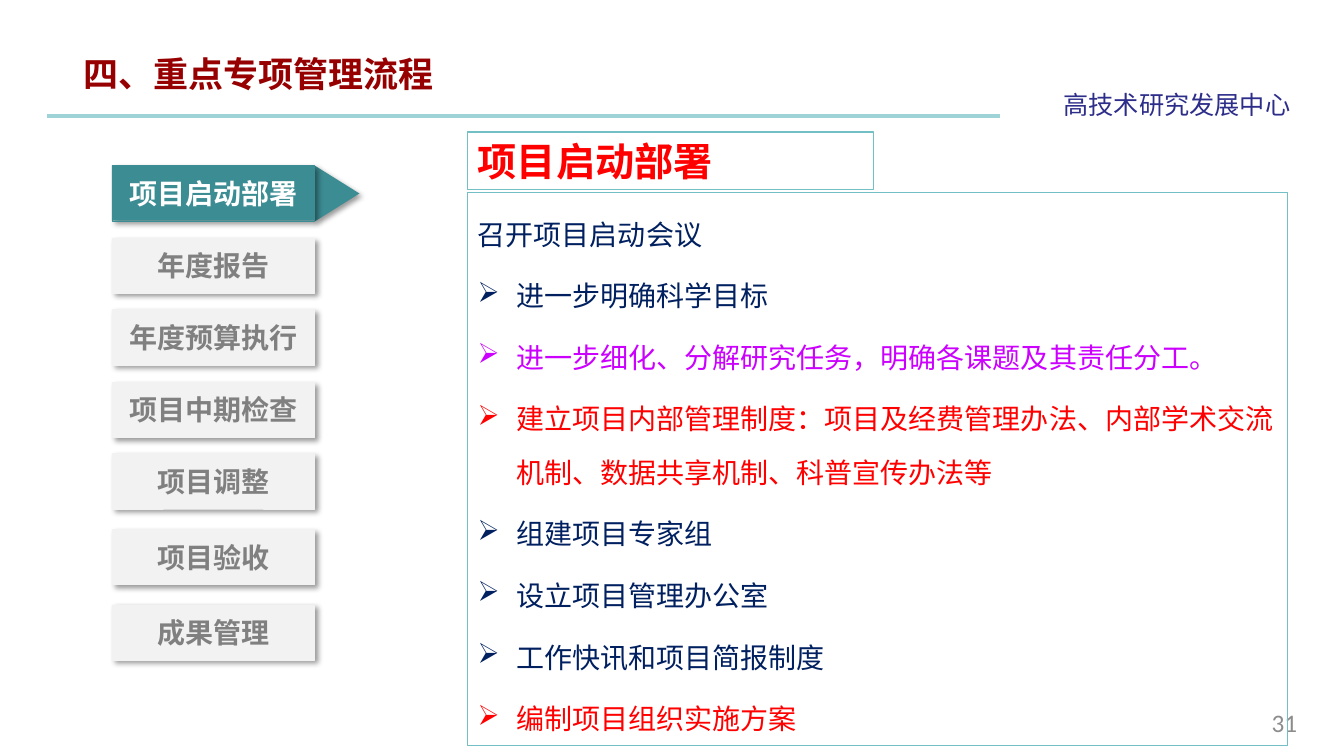
import pptx
import pptx.util
import pptx.dml.color
import pptx.enum.shapes
import pptx.enum.text
import pptx.oxml
import pptx.oxml.ns
from lxml import etree

Inches = pptx.util.Inches
Pt = pptx.util.Pt
RGBColor = pptx.dml.color.RGBColor
SHAPE = pptx.enum.shapes.MSO_SHAPE
ALIGN = pptx.enum.text.PP_ALIGN
ANCHOR = pptx.enum.text.MSO_ANCHOR
AUTO = pptx.enum.text.MSO_AUTO_SIZE
qn = pptx.oxml.ns.qn

WHITE = RGBColor(0xFF, 0xFF, 0xFF)
PALE_TEAL = RGBColor(0x9E, 0xD3, 0xD7)
FRAME_TEAL = RGBColor(0x72, 0xBF, 0xC5)
TEAL = RGBColor(0x3C, 0x8C, 0x93)
LIGHT_GRAY = RGBColor(0xF2, 0xF2, 0xF2)
GRAY = RGBColor(0x80, 0x80, 0x80)
NUMBER_GRAY = RGBColor(0x8C, 0x8C, 0x8C)
INDIGO = RGBColor(0x2D, 0x2D, 0x8A)
MAROON = RGBColor(0x96, 0x00, 0x00)
NAVY = RGBColor(0x00, 0x20, 0x60)
VIOLET = RGBColor(0xCC, 0x00, 0xFF)
RED = RGBColor(0xFF, 0x00, 0x00)

STEPS = [
    ("项目启动部署", 1.64),
    ("年度报告", 2.36),
    ("年度预算执行", 3.07),
    ("项目中期检查", 3.79),
    ("项目调整", 4.5),
    ("项目验收", 5.25),
    ("成果管理", 6),
]
TASKS = [
    ("进一步明确科学目标", NAVY),
    ("进一步细化、分解研究任务，明确各课题及其责任分工。", VIOLET),
    ("建立项目内部管理制度：项目及经费管理办法、内部学术交流机制、数据共享机制、科普宣传办法等", RED),
    ("组建项目专家组", NAVY),
    ("设立项目管理办公室", NAVY),
    ("工作快讯和项目简报制度", NAVY),
    ("编制项目组织实施方案", RED),
]


class Deck:
    font = "Noto Sans CJK SC"

    def __init__(self):
        self.prs = pptx.Presentation()
        self.prs.slide_width = Inches(13.33)
        self.prs.slide_height = Inches(7.5)
        self.s = self.prs.slides.add_slide(self.prs.slide_layouts[6])

    def line(self, x1, y1, x2, y2, color, width):
        c = self.s.shapes.add_connector(
            pptx.enum.shapes.MSO_CONNECTOR.STRAIGHT,
            Inches(x1), Inches(y1), Inches(x2), Inches(y2))
        c.line.color.rgb = color
        c.line.width = Pt(width)
        etree.SubElement(c._element.spPr, qn("a:effectLst"))

    def paragraph(self, p, text, size, color, bold=False, font=None):
        p.add_run().text = text
        p.font.size = Pt(size)
        p.font.bold = bold
        p.font.color.rgb = color
        p.font.name = font or self.font
        ea = etree.SubElement(p._p.pPr.find(qn("a:defRPr")), qn("a:ea"))
        ea.set("typeface", self.font)

    def text(self, x, y, w, h, text, size, color, wrap=True, **style):
        sp = self.s.shapes.add_textbox(Inches(x), Inches(y), Inches(w), Inches(h))
        sp.text_frame.word_wrap = wrap
        p = sp.text_frame.paragraphs[0]
        self.paragraph(p, text, size, color, **style)
        return sp

    def frame(self, x, y, w, h):
        sp = self.s.shapes.add_shape(
            SHAPE.RECTANGLE, Inches(x), Inches(y), Inches(w), Inches(h))
        sp.shadow.inherit = False
        sp.fill.background()
        sp.line.color.rgb = FRAME_TEAL
        sp.line.width = Pt(0.75)
        tf = sp.text_frame
        tf.word_wrap = True
        tf.auto_size = AUTO.SHAPE_TO_FIT_TEXT
        tf.vertical_anchor = ANCHOR.TOP
        tf.paragraphs[0].alignment = ALIGN.LEFT
        return tf

    def item(self, p, text, color, bullet=None):
        p.alignment = ALIGN.LEFT
        p.line_spacing = Pt(38)
        p.space_after = Pt(6)
        self.paragraph(p, text, 20, color)
        pPr = p._p.pPr
        pPr.set("marL", str(Inches(0.38)))
        pPr.set("indent", str(-Inches(0.38)))
        if bullet:
            bu = etree.Element(qn("a:buChar"), char=bullet)
            pPr.find(qn("a:defRPr")).addprevious(bu)

    def raised(self, kind, x, y, w, h, fill):
        sp = self.s.shapes.add_shape(kind, Inches(x), Inches(y), Inches(w), Inches(h))
        sp.fill.solid()
        sp.fill.fore_color.rgb = fill
        sp.line.fill.background()
        sp.shadow.inherit = False
        effects = sp._element.spPr.find(qn("a:effectLst"))
        shadow = etree.SubElement(
            effects, qn("a:outerShdw"), blurRad=str(Pt(4)), dist=str(Pt(3)),
            dir="2700000", algn="tl", rotWithShape="0")
        color = etree.SubElement(shadow, qn("a:srgbClr"), val="000000")
        etree.SubElement(color, qn("a:alpha"), val="40000")
        return sp

    def step(self, text, y, fill, color):
        sp = self.raised(SHAPE.RECTANGLE, 1.11, y, 2.01, 0.55, fill)
        sp.line.color.rgb = fill
        sp.line.width = Pt(0.25)
        tf = sp.text_frame
        tf.margin_left = tf.margin_right = tf.margin_top = tf.margin_bottom = 0
        tf.vertical_anchor = ANCHOR.MIDDLE
        p = tf.paragraphs[0]
        p.alignment = ALIGN.CENTER
        self.paragraph(p, text, 20, color, bold=True)


def main():
    d = Deck()
    d.line(0.47, 1.15, 9.92, 1.15, PALE_TEAL, 3)
    d.text(10.45, 0.84, 2.47, 0.4, "高技术研究发展中心", 18, INDIGO, wrap=False)
    number = d.text(12.34, 6.97, 0.8, 0.4, "31", 18, NUMBER_GRAY, font="Calibri")
    number.text_frame.vertical_anchor = ANCHOR.MIDDLE
    number.text_frame.paragraphs[0].alignment = ALIGN.CENTER
    title = d.text(0.73, 0.47, 6.98, 0.52, "四、重点专项管理流程", 25, MAROON, bold=True)
    p = title.text_frame.paragraphs[0]
    p.line_spacing = Pt(30)
    p.space_before = p.space_after = Pt(6)

    tf = d.frame(4.64, 1.91, 8.13, 5.49)
    d.item(tf.paragraphs[0], "召开项目启动会议", NAVY)
    for text, color in TASKS:
        d.item(tf.add_paragraph(), text, color, "➢")
    tf = d.frame(4.64, 1.31, 4.02, 0.57)
    d.paragraph(tf.paragraphs[0], "项目启动部署", 28, RED, bold=True, font="Arial")

    pointer = d.raised(SHAPE.ISOSCELES_TRIANGLE, 3.07, 1.7, 0.55, 0.44, TEAL)
    pointer.rotation = 90
    for i, (text, y) in enumerate(STEPS):
        fill, color = (LIGHT_GRAY, GRAY) if i else (TEAL, WHITE)
        d.step(text, y, fill, color)
    d.prs.save("out.pptx")


if __name__ == "__main__":
    main()
